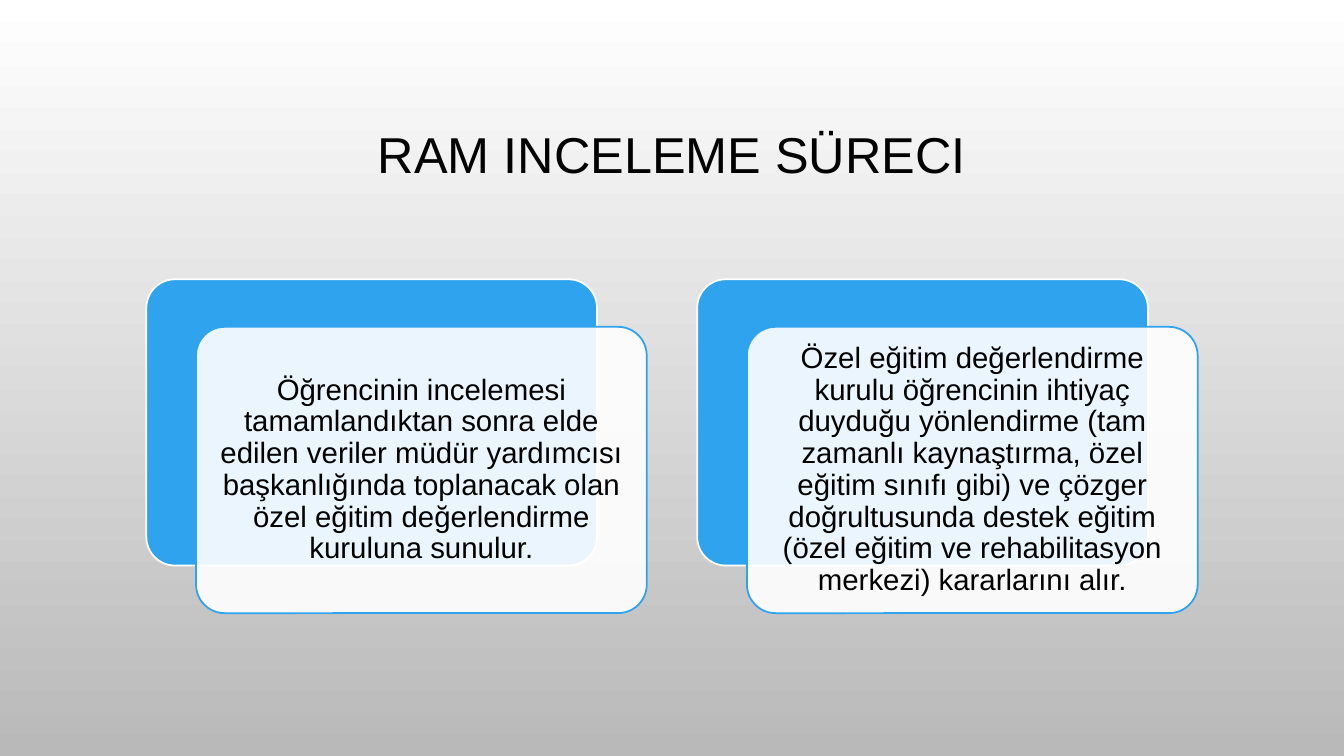
from lxml.etree import SubElement
from pptx import Presentation
from pptx.dml.color import RGBColor
from pptx.enum.shapes import MSO_SHAPE
from pptx.enum.text import MSO_ANCHOR, MSO_AUTO_SIZE, PP_ALIGN
from pptx.oxml.ns import qn
from pptx.util import Pt

TITLE = "RAM INCELEME SÜRECI"
STEPS = [
    "Öğrencinin incelemesi tamamlandıktan sonra elde edilen veriler müdür "
    "yardımcısı başkanlığında toplanacak olan özel eğitim değerlendirme "
    "kuruluna sunulur.",
    "Özel eğitim değerlendirme kurulu öğrencinin ihtiyaç duyduğu yönlendirme "
    "(tam zamanlı kaynaştırma, özel eğitim sınıfı gibi) ve çözger "
    "doğrultusunda destek eğitim (özel eğitim ve rehabilitasyon merkezi) "
    "kararlarını alır.",
]
COLORS = {"white": "FFFFFF", "gray": "B9B9B9", "blue": "2FA3EE", "black": "000000"}

CARD_LEFT, CARD_TOP = 104.5, 199.5
CARD_WIDTH, CARD_HEIGHT = 322, 204.5
CARD_PITCH = 393.5
SHIFT_X, SHIFT_Y = 35.5, 34
INSET = 6.5
FRAME_FORMAT = {
    "word_wrap": True,
    "auto_size": MSO_AUTO_SIZE.NONE,
    "vertical_anchor": MSO_ANCHOR.MIDDLE,
}


def color(name):
    return RGBColor.from_string(COLORS[name])


def write(shape, text, size):
    frame = shape.text_frame
    frame.text = text
    for name, value in FRAME_FORMAT.items():
        setattr(frame, name, value)
    para = frame.paragraphs[0]
    para.alignment = PP_ALIGN.CENTER
    para.line_spacing = 0.9
    span = para.runs[0]
    for name, value in {"name": "Arial", "size": Pt(size), "bold": False}.items():
        setattr(span.font, name, value)
    span.font.color.rgb = color("black")


def add_card(page, left, top, fill, line):
    card = page.shapes.add_shape(
        MSO_SHAPE.ROUNDED_RECTANGLE,
        Pt(left), Pt(top), Pt(CARD_WIDTH), Pt(CARD_HEIGHT),
    )
    card.adjustments[0] = 0.1
    card.shadow.inherit = False
    card.fill.solid()
    card.fill.fore_color.rgb = color(fill)
    card.line.color.rgb = color(line)
    card.line.width = Pt(1.25)
    return card


def main():
    deck = Presentation()
    deck.slide_width, deck.slide_height = Pt(960), Pt(540)
    page = deck.slides.add_slide(deck.slide_layouts[5])

    backdrop = page.background.fill
    backdrop.gradient()
    backdrop.gradient_angle = 270
    for stop, name in zip(backdrop.gradient_stops, ("white", "gray")):
        stop.color.rgb = color(name)

    title = page.shapes.title
    title_place = {"left": 72, "top": 49, "width": 816, "height": 126}
    for name, value in title_place.items():
        setattr(title, name, Pt(value))
    write(title, TITLE, 36)

    for index, step in enumerate(STEPS):
        left = CARD_LEFT + index * CARD_PITCH
        add_card(page, left, CARD_TOP, "blue", "white")
        front = add_card(page, left + SHIFT_X, CARD_TOP + SHIFT_Y, "white", "blue")
        tint = front.fill._xPr.find(qn("a:solidFill"))[0]
        SubElement(tint, qn("a:alpha"), val="90000")
        for side in ("left", "top", "right", "bottom"):
            setattr(front.text_frame, f"margin_{side}", Pt(INSET))
        write(front, step, 21)

    deck.save("out.pptx")


if __name__ == "__main__":
    main()
